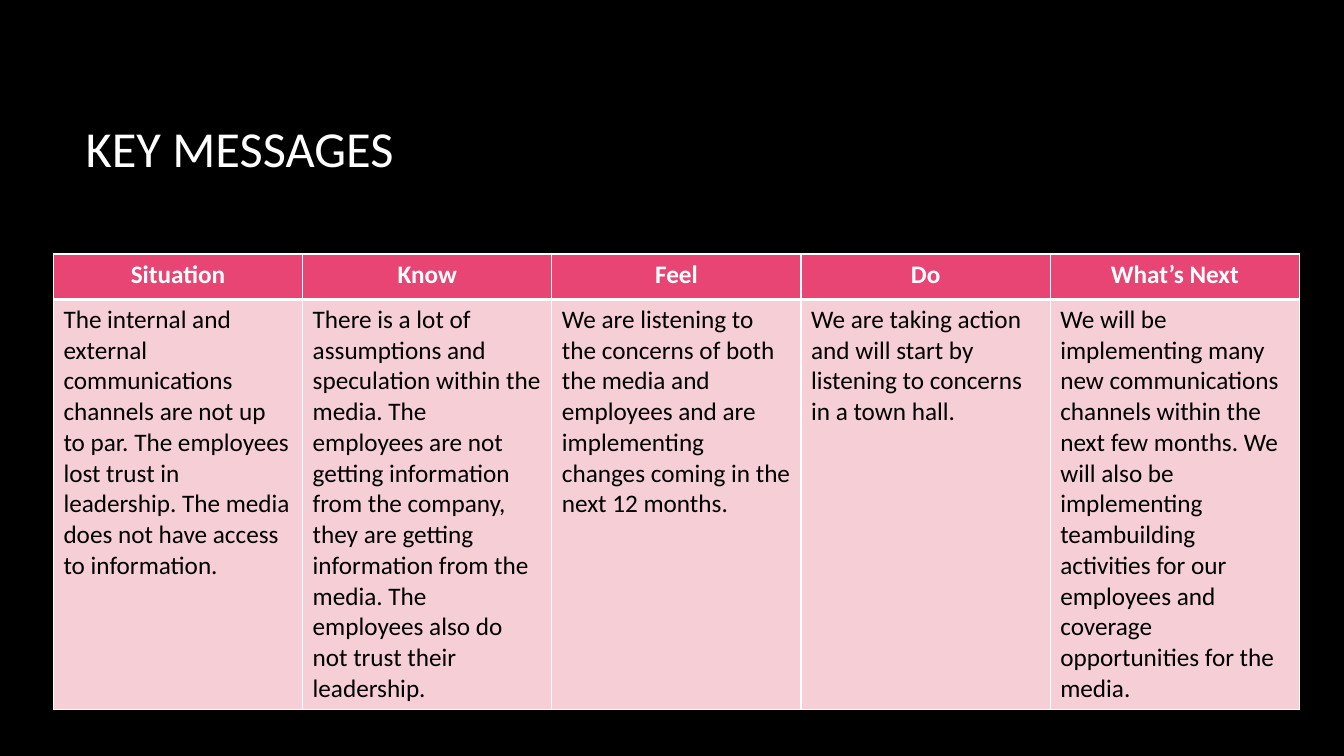
from lxml import etree
from pptx import Presentation
from pptx.dml.color import RGBColor
from pptx.enum import text
from pptx.oxml import ns
from pptx.util import Inches, Pt

COLORS = {
    "background": "000000",
    "white": "FFFFFF",
    "black": "000000",
    "header": "E84574",
    "body": "F6CFD6",
}
FONT = "Calibri"
MESSAGES = {
    "Situation": "The internal and external communications channels are not up to par. "
    "The employees lost trust in leadership. The media does not have access to information.",
    "Know": "There is a lot of assumptions and speculation within the media. "
    "The employees are not getting information from the company, they are getting "
    "information from the media. The employees also do not trust their leadership.",
    "Feel": "We are listening to the concerns of both the media and employees and are "
    "implementing changes coming in the next 12 months.",
    "Do": "We are taking action and will start by listening to concerns in a town hall.",
    "What’s Next": "We will be implementing many new communications channels within the "
    "next few months. We will also be implementing teambuilding activities for our "
    "employees and coverage opportunities for the media.",
}


def color(name):
    return RGBColor.from_string(COLORS[name])


def style_paragraph(para, size, ink, bold=False, align=text.PP_ALIGN.LEFT):
    para.alignment = align
    para.font.name = FONT
    para.font.size = Pt(size)
    para.font.bold = bold
    para.font.color.rgb = color(ink)


def set_borders(cell, top, bottom):
    properties = cell._tc.get_or_add_tcPr()
    widths = {"lnL": 1, "lnR": 1, "lnT": top, "lnB": bottom}
    for index, (side, width) in enumerate(widths.items()):
        line = etree.Element(ns.qn(f"a:{side}"), w=str(Pt(width)))
        fill = etree.SubElement(line, ns.qn("a:solidFill"))
        etree.SubElement(fill, ns.qn("a:srgbClr"), val=COLORS["white"])
        properties.insert(index, line)


def add_title(page, left, top, width, height):
    title = page.shapes.title
    title.left, title.top = Inches(left), Inches(top)
    title.width, title.height = Inches(width), Inches(height)
    frame = title.text_frame
    frame.text = "KEY MESSAGES"
    frame.word_wrap = True
    frame.vertical_anchor = text.MSO_ANCHOR.MIDDLE
    style_paragraph(frame.paragraphs[0], 36, "white")


def fill_cell(cell, wording, fill, top, bottom, **style):
    cell.text = wording
    cell.fill.solid()
    cell.fill.fore_color.rgb = color(fill)
    set_borders(cell, top, bottom)
    style_paragraph(cell.text_frame.paragraphs[0], 18, **style)


def add_messages(page, left, top, width, header_height, body_height):
    frame = page.shapes.add_table(
        2, len(MESSAGES), Inches(left), Inches(top),
        Inches(width), Inches(header_height + body_height),
    )
    table = frame.table
    table.rows[0].height = Inches(header_height)
    table.rows[1].height = Inches(body_height)
    for index, (heading, message) in enumerate(MESSAGES.items()):
        fill_cell(table.cell(0, index), heading, "header", 1, 3,
                  ink="white", bold=True, align=text.PP_ALIGN.CENTER)
        fill_cell(table.cell(1, index), message, "body", 3, 1, ink="black")


def main():
    deck = Presentation()
    deck.slide_width, deck.slide_height = Inches(13.33), Inches(7.5)
    page = deck.slides.add_slide(deck.slide_layouts[5])
    page.background.fill.solid()
    page.background.fill.fore_color.rgb = color("background")
    add_title(page, 0.75, 0.67, 11.08, 1.59)
    add_messages(page, 0.53, 2.52, 12.36, 0.45, 3.96)
    deck.save("out.pptx")


if __name__ == "__main__":
    main()
